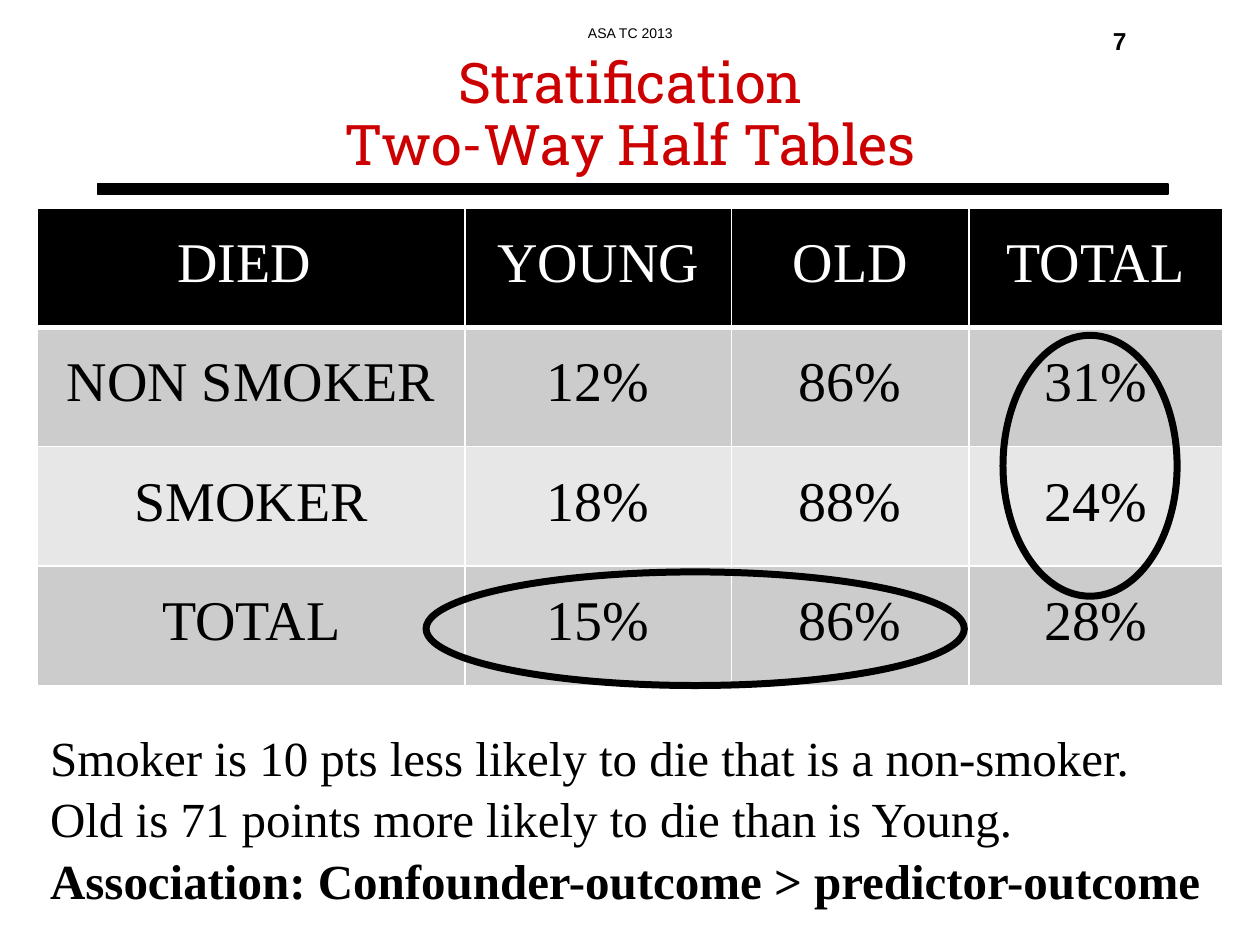
from dataclasses import dataclass
from typing import Optional

from lxml import etree
from pptx import Presentation
from pptx.dml.color import RGBColor
from pptx.enum import shapes, text
from pptx.oxml import ns
from pptx.util import Cm, Pt

BLACK = RGBColor(0x00, 0x00, 0x00)
WHITE = RGBColor(0xFF, 0xFF, 0xFF)
RED = RGBColor(0xCC, 0x00, 0x00)
GREY = RGBColor(0xCC, 0xCC, 0xCC)
PALE = RGBColor(0xE7, 0xE7, 0xE7)
SERIF = "Times New Roman"
CENTER = text.PP_ALIGN.CENTER
MIDDLE = text.MSO_ANCHOR.MIDDLE


@dataclass
class Box:
    left: float
    top: float
    width: float
    height: float

    def place(self) -> tuple:
        return Cm(self.left), Cm(self.top), Cm(self.width), Cm(self.height)


@dataclass
class Label:
    words: str
    box: Box
    size: float
    font: str
    color: RGBColor = BLACK
    bold: bool = False
    align: text.PP_ALIGN = CENTER
    anchor: text.MSO_ANCHOR = text.MSO_ANCHOR.TOP
    space: Optional[float] = None


def style(para, size: float, font: str, color: RGBColor, bold: bool = False) -> None:
    for run in para.runs:
        run.font.size = Pt(size)
        run.font.name = font
        run.font.color.rgb = color
        run.font.bold = bold


def add_label(slide, item: Label):
    frame = slide.shapes.add_textbox(*item.box.place()).text_frame
    frame.word_wrap = True
    frame.vertical_anchor = item.anchor
    frame.text = item.words
    para = frame.paragraphs[0]
    para.alignment = item.align
    if item.space:
        para.line_spacing = item.space
    style(para, item.size, item.font, item.color, item.bold)
    return para


def add_form(slide, kind: shapes.MSO_SHAPE, box: Box, line: float,
             fill: Optional[RGBColor] = None) -> None:
    form = slide.shapes.add_shape(kind, *box.place())
    form.shadow.inherit = False
    if fill is None:
        form.fill.background()
    else:
        form.fill.solid()
        form.fill.fore_color.rgb = fill
    form.line.color.rgb = BLACK
    form.line.width = Pt(line)


def add_edges(cell, base: float) -> None:
    props = cell._tc.get_or_add_tcPr()
    for side, width in (("L", 1), ("R", 1), ("T", 1), ("B", base)):
        edge = etree.SubElement(props, ns.qn(f"a:ln{side}"), w=str(Pt(width)))
        fill = etree.SubElement(edge, ns.qn("a:solidFill"))
        etree.SubElement(fill, ns.qn("a:srgbClr"), val=str(WHITE))


def fill_cell(cell, words: str, back: RGBColor, color: RGBColor, base: float) -> None:
    add_edges(cell, base)
    cell.fill.solid()
    cell.fill.fore_color.rgb = back
    cell.vertical_anchor = MIDDLE
    cell.text = words
    para = cell.text_frame.paragraphs[0]
    para.alignment = CENTER
    para.line_spacing = 0.8
    para.space_before = Pt(6.4)
    style(para, 32, SERIF, color)


def add_rates(slide, rows: list, widths: list, box: Box) -> None:
    grid = slide.shapes.add_table(len(rows), len(widths), *box.place()).table
    for col, width in zip(grid.columns, widths):
        col.width = Cm(width)
    for r, row in enumerate(rows):
        head = r == 0
        back = BLACK if head else (GREY if r % 2 else PALE)
        for c, words in enumerate(row):
            fill_cell(grid.cell(r, c), words, back,
                      WHITE if head else BLACK, 3 if head else 1)


RULE = Box(1.96, 3.71, 21.59, 0.2)
LABELS = [
    Label("ASA TC 2013", Box(10.59, 0.43, 4.24, 0.64), 8, "Arial", space=0.8),
    Label("7", Box(21.72, 0.41, 1.7, 0.94), 14, "Arial", bold=True),
    Label("Stratification\vTwo-Way Half Tables", Box(1.96, 0.86, 21.51, 2.97),
          32, "Roboto Slab", RED, anchor=MIDDLE, space=0.92),
]
NOTES = Label(
    "Smoker is 10 pts less likely to die that is a non-smoker.\v"
    "Old is 71 points more likely to die than is Young.\v"
    "Association: Confounder-outcome > predictor-outcome",
    Box(0.76, 14.5, 23.88, 3.2), 28, SERIF, align=text.PP_ALIGN.LEFT, space=1.04)
RATES = [
    ["DIED ", "YOUNG", "OLD", "TOTAL"],
    ["NON SMOKER", "12%", "86%", "31%"],
    ["SMOKER", "18%", "88%", "24%"],
    ["TOTAL", "15%", "86%", "28%"],
]
WIDTHS = [8.61, 5.38, 4.78, 5.11]
RINGS = [Box(20.22, 6.76, 3.51, 5.26), Box(8.59, 11.53, 10.85, 2.29)]


def main() -> None:
    deck = Presentation()
    deck.slide_width, deck.slide_height = Cm(25.4), Cm(19.05)
    slide = deck.slides.add_slide(deck.slide_layouts[6])

    # Heading
    add_form(slide, shapes.MSO_SHAPE.RECTANGLE, RULE, 0.75, BLACK)
    for item in LABELS:
        add_label(slide, item)

    # Conclusions, the last one in bold
    add_label(slide, NOTES).runs[-1].font.bold = True

    # Death rates, with the compared pairs ringed
    add_rates(slide, RATES, WIDTHS, Box(0.76, 4.19, sum(WIDTHS), 9.63))
    for ring in RINGS:
        add_form(slide, shapes.MSO_SHAPE.OVAL, ring, 4)

    deck.save("out.pptx")


if __name__ == "__main__":
    main()
